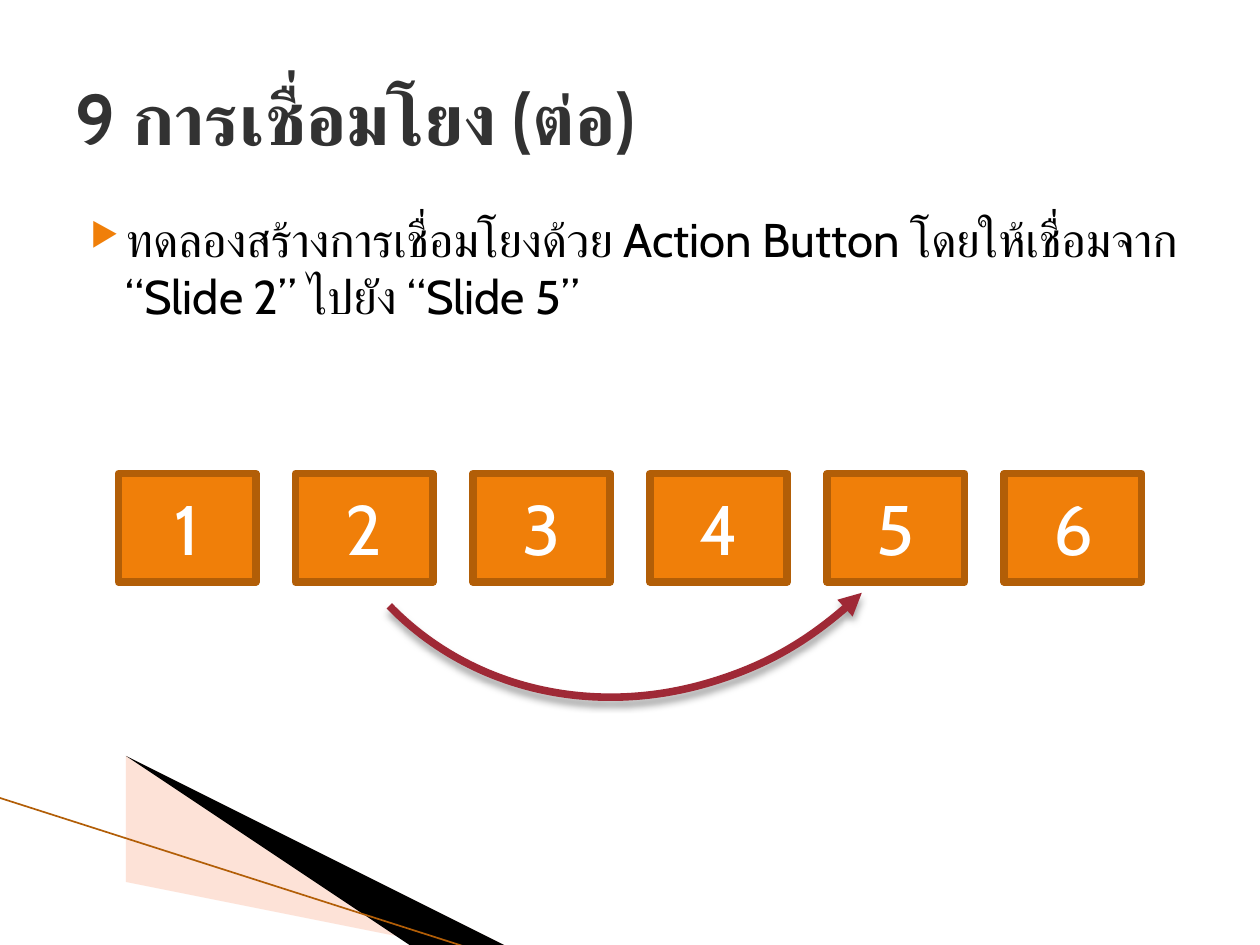
from lxml import etree
from pptx import Presentation
from pptx.dml.color import RGBColor
from pptx.enum.shapes import MSO_CONNECTOR, MSO_SHAPE
from pptx.enum.text import MSO_ANCHOR, PP_ALIGN
from pptx.oxml.ns import qn
from pptx.util import Emu, Inches, Pt

STRAIGHT = MSO_CONNECTOR.STRAIGHT
RECTANGLE, ARC = MSO_SHAPE.RECTANGLE, MSO_SHAPE.ARC
TOP, MIDDLE = MSO_ANCHOR.TOP, MSO_ANCHOR.MIDDLE
LEFT, CENTER = PP_ALIGN.LEFT, PP_ALIGN.CENTER

FONT = "Cabin"
ORANGE = RGBColor(0xF0, 0x7F, 0x09)
DARK_ORANGE = RGBColor(0xB2, 0x5E, 0x07)
PEACH = RGBColor(0xFC, 0xB7, 0x9B)
RED = RGBColor(0x9F, 0x29, 0x36)
CHARCOAL = RGBColor(0x32, 0x32, 0x32)
BLACK = RGBColor(0, 0, 0)
WHITE = RGBColor(0xFF, 0xFF, 0xFF)

TITLE = "9 การเชื่อมโยง (ต่อ)"
BODY = "ทดลองสร้างการเชื่อมโยงด้วย Action Button โดยให้เชื่อมจาก\v“Slide 2” ไปยัง “Slide 5”"
STEPS = ["1", "2", "3", "4", "5", "6"]
WEDGES = [
    ([(0.55, 6.51), (5.95, 7.51), (4.56, 7.51), (0.55, 6.5)], PEACH, 40),
    ([(0.53, 6.49), (4.57, 7.51), (3.72, 7.52), (0.54, 6.5)], BLACK, 100),
]

STEP_LEFT, STEP_TOP, STEP_PITCH = 0.94, 3.76, 1.406
STEP_WIDTH, STEP_HEIGHT = 1.09, 0.86
BORDER = Pt(4.33)


def add_element(parent, tag, **attributes):
    element = etree.SubElement(parent, qn(tag))
    for name, value in attributes.items():
        element.set(name, str(value))
    return element


def write_text(shape, text, size, color, bold=False, align=LEFT, anchor=TOP, bullet=None):
    frame = shape.text_frame
    frame.word_wrap = True
    frame.vertical_anchor = anchor
    paragraph = frame.paragraphs[0]
    paragraph.text = text
    paragraph.alignment = align
    if bullet:
        properties = paragraph._p.get_or_add_pPr()
        properties.set("marL", str(Inches(0.4)))
        properties.set("indent", str(Inches(-0.28)))
        bullet_color = add_element(properties, "a:buClr")
        add_element(bullet_color, "a:srgbClr", val=ORANGE)
        add_element(properties, "a:buSzPct", val=68000)
        add_element(properties, "a:buChar", char=bullet)
    for run in paragraph.runs:
        run.font.size = Pt(size)
        run.font.bold = bold
        run.font.name = FONT
        run.font.color.rgb = color
        add_element(run._r.get_or_add_rPr(), "a:cs", typeface=FONT)


def add_wedge(slide, points, color, opacity):
    builder = slide.shapes.build_freeform(*points[0], scale=Inches(1))
    builder.add_line_segments(points[1:], close=True)
    wedge = builder.convert_to_shape()
    wedge.shadow.inherit = False
    wedge.fill.solid()
    wedge.fill.fore_color.rgb = color
    wedge.line.fill.background()
    if opacity < 100:
        fill_color = wedge._element.spPr.find(qn("a:solidFill"))[0]
        add_element(fill_color, "a:alpha", val=opacity * 1000)


def add_step(slide, index, label):
    step = slide.shapes.add_shape(
        RECTANGLE, Inches(STEP_LEFT + index * STEP_PITCH), Inches(STEP_TOP),
        Inches(STEP_WIDTH), Inches(STEP_HEIGHT))
    step.shadow.inherit = False
    step.fill.solid()
    step.fill.fore_color.rgb = ORANGE
    step.line.color.rgb = DARK_ORANGE
    step.line.width = BORDER
    write_text(step, label, 40, WHITE, align=CENTER, anchor=MIDDLE)


def add_link_arc(slide):
    arc = slide.shapes.add_shape(ARC, Inches(2.31), Inches(0.35), Inches(5.53), Inches(5.07))
    arc.rotation = 135.9
    arc.fill.background()
    arc.line.color.rgb = RED
    arc.line.width = BORDER
    add_element(arc.line._get_or_add_ln(), "a:headEnd", type="triangle")
    arc.shadow.inherit = False
    effects = arc._element.spPr.find(qn("a:effectLst"))
    shadow = add_element(effects, "a:outerShdw", blurRad=Pt(4), dist=Pt(3),
                         dir=90 * 60000, rotWithShape=0)
    shadow_color = add_element(shadow, "a:srgbClr", val=BLACK)
    add_element(shadow_color, "a:alpha", val=35000)


def main():
    presentation = Presentation()
    presentation.slide_width, presentation.slide_height = Inches(10), Inches(7.5)
    slide = presentation.slides.add_slide(presentation.slide_layouts[6])

    for points, color, opacity in WEDGES:
        add_wedge(slide, points, color, opacity)
    edge = slide.shapes.add_connector(
        STRAIGHT, Inches(-0.01), Inches(6.33), Inches(3.71), Inches(7.52))
    edge.line.color.rgb = DARK_ORANGE
    edge.line.width = Emu(12065)
    add_element(edge._element.spPr, "a:effectLst")

    body = slide.shapes.add_textbox(Inches(0.5), Inches(1.62), Inches(9), Inches(4.95))
    write_text(body, BODY, 27, BLACK, bullet="▶")
    title = slide.shapes.add_textbox(Inches(0.5), Inches(0.3), Inches(9), Inches(1.25))
    write_text(title, TITLE, 41, CHARCOAL, bold=True, anchor=MIDDLE)

    for index, label in enumerate(STEPS):
        add_step(slide, index, label)
    add_link_arc(slide)
    presentation.save("out.pptx")


if __name__ == "__main__":
    main()
